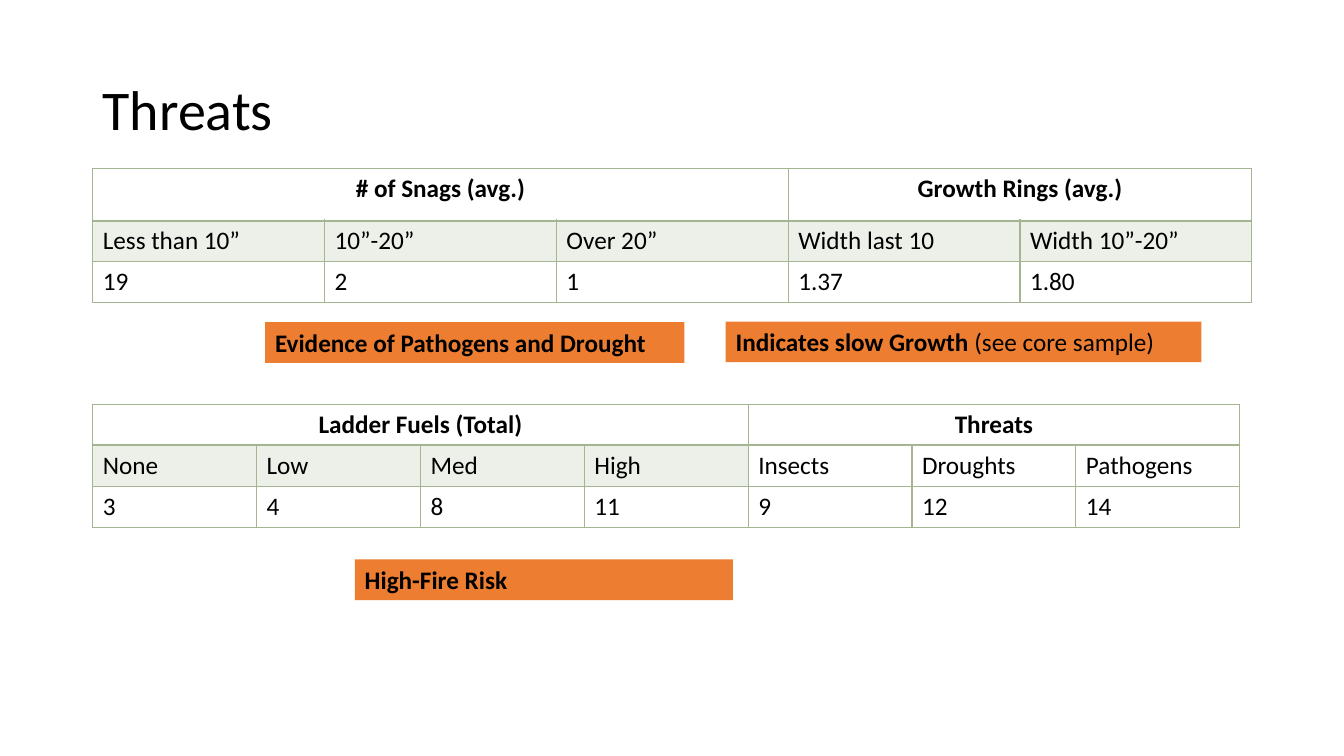
"""Build the slide on threats: two tables of counts with orange findings."""
import pptx
import pptx.dml.color
import pptx.enum.shapes
import pptx.enum.text
import pptx.oxml
import pptx.oxml.ns
import pptx.util
import lxml.etree

THEME = {
    "font": "Calibri", "title": 40, "body": 18,
    "ink": "000000", "line": "A5B592", "tint": "EDF0E9", "note": "ED7D31",
}
ALIGN = pptx.enum.text.PP_ALIGN

deck = pptx.Presentation()
deck.slide_width = pptx.util.Inches(13.33)
deck.slide_height = pptx.util.Inches(7.5)
col = deck.slide_width / 100
row = deck.slide_height / 100
slide = deck.slides.add_slide(deck.slide_layouts[6])
left = 6.9


def write(para, runs, size="body", align=ALIGN.LEFT):
    """Add (text, bold) runs to a paragraph."""
    para.alignment = align
    for text, bold in runs:
        run = para.add_run()
        run.text = text
        run.font.name = THEME["font"]
        run.font.size = pptx.util.Pt(THEME[size])
        run.font.bold = bold
        run.font.color.rgb = pptx.dml.color.RGBColor.from_string(THEME["ink"])


def edge(cell, side, width):
    """Draw one border of a table cell."""
    props = cell._tc.get_or_add_tcPr()
    line = lxml.etree.SubElement(props, pptx.oxml.ns.qn("a:ln" + side))
    line.set("w", str(pptx.util.Pt(width)))
    fill = lxml.etree.SubElement(line, pptx.oxml.ns.qn("a:solidFill"))
    tone = lxml.etree.SubElement(fill, pptx.oxml.ns.qn("a:srgbClr"))
    tone.set("val", THEME["line"])


title = slide.shapes.add_textbox(
    int(left * col), int(5.33 * row), int(86.25 * col), int(19.33 * row)).text_frame
title.word_wrap = True
title.vertical_anchor = pptx.enum.text.MSO_ANCHOR.MIDDLE
title.paragraphs[0].line_spacing = pptx.util.Pt(THEME["title"])
write(title.paragraphs[0], [("Threats", False)], "title")

tables = [
    {"top": 22.27, "width": 86.25, "head": 6.93, "tinted": 5,
     "groups": [("# of Snags (avg.)", 3), ("Growth Rings (avg.)", 2)],
     "rows": [["Less than 10”", "10”-20”", "Over 20”", "Width last 10", "Width 10”-20”"],
              ["19", "2", "1", "1.37", "1.80"]]},
    {"top": 53.47, "width": 85.35, "head": 5.43, "tinted": 4,
     "groups": [("Ladder Fuels (Total)", 4), ("Threats", 3)],
     "rows": [["None", "Low", "Med", "High", "Insects", "Droughts", "Pathogens"],
              ["3", "4", "8", "11", "9", "12", "14"]]},
]
body = 5.43

for data in tables:
    count = len(data["rows"][0])
    table = slide.shapes.add_table(
        3, count, int(left * col), int(data["top"] * row),
        int(data["width"] * col), int((data["head"] + 2 * body) * row)).table
    table.first_row = False
    table.horz_banding = False
    for part in table.columns:
        part.width = int(data["width"] * col / count)
    for part, high in zip(table.rows, [data["head"], body, body]):
        part.height = int(high * row)

    for y in range(3):
        for x in range(count):
            cell = table.cell(y, x)
            for side in "LRTB":
                heavy = (y, side) in [(0, "B"), (1, "T")]
                edge(cell, side, 2 if heavy else 1)
            if y == 1 and x < data["tinted"]:
                cell.fill.solid()
                cell.fill.fore_color.rgb = pptx.dml.color.RGBColor.from_string(THEME["tint"])
            else:
                cell.fill.background()
            if y > 0:
                write(cell.text_frame.paragraphs[0], [(data["rows"][y - 1][x], False)])

    start = 0
    for name, span in data["groups"]:
        cell = table.cell(0, start)
        cell.merge(table.cell(0, start + span - 1))
        write(cell.text_frame.paragraphs[0], [(name, True)], align=ALIGN.CENTER)
        start += span

notes = [
    (19.73, 42.6, 31.2, [("Evidence of Pathogens and Drought", True)]),
    (54, 42.53, 35.4, [("Indicates slow Growth", True), (" (see core sample)", False)]),
    (26.4, 74, 28.13, [("High-Fire Risk", True)]),
]
for x, y, width, runs in notes:
    note = slide.shapes.add_shape(
        pptx.enum.shapes.MSO_SHAPE.RECTANGLE,
        int(x * col), int(y * row), int(width * col), int(5.39 * row))
    note.shadow.inherit = False
    note.fill.solid()
    note.fill.fore_color.rgb = pptx.dml.color.RGBColor.from_string(THEME["note"])
    note.line.fill.background()
    note.text_frame.word_wrap = True
    note.text_frame.vertical_anchor = pptx.enum.text.MSO_ANCHOR.TOP
    write(note.text_frame.paragraphs[0], runs)

deck.save("out.pptx")
